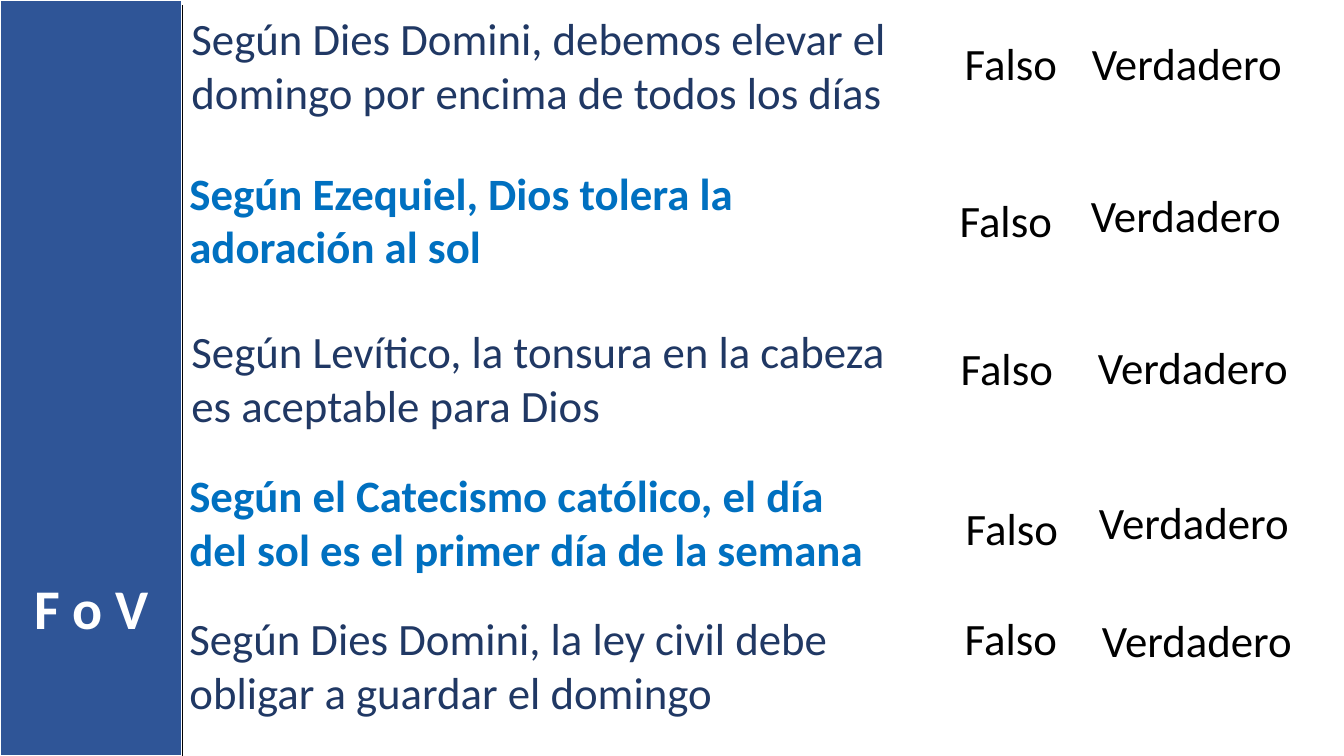
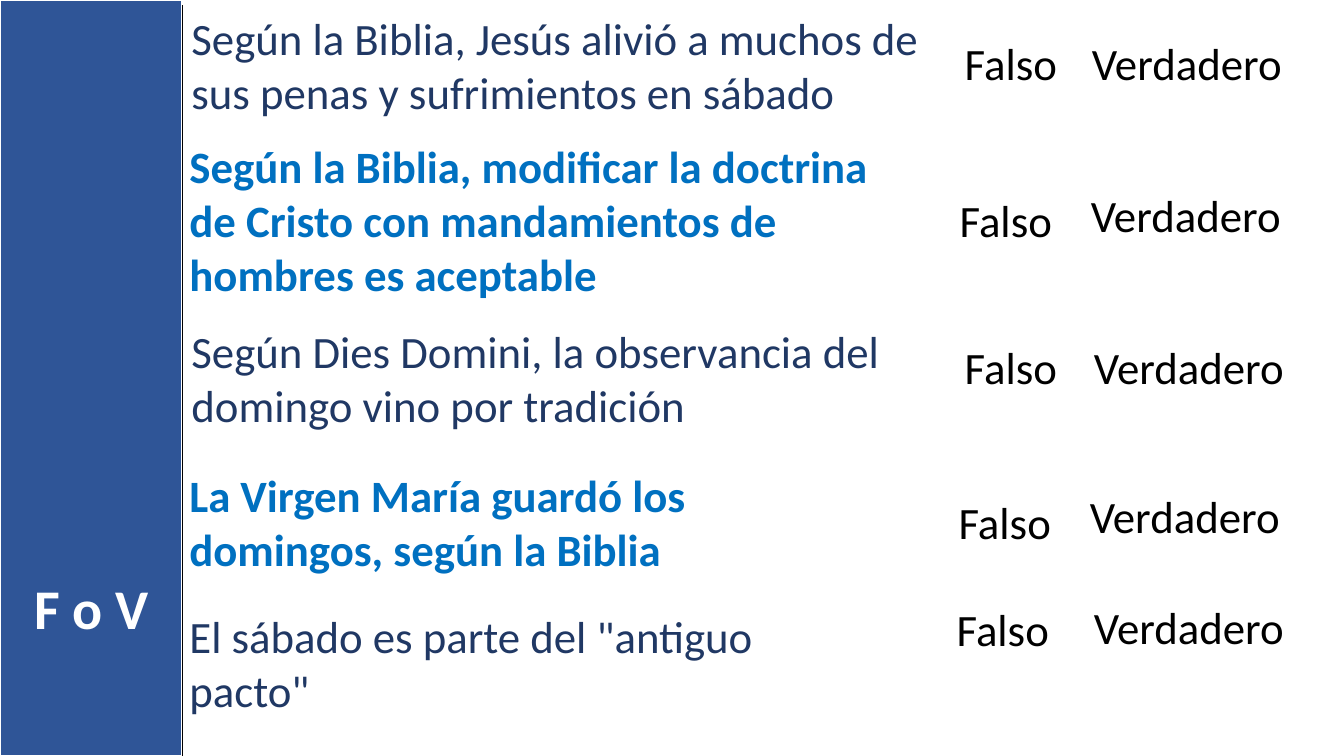
from dataclasses import dataclass
from typing import Any, NamedTuple

from lxml.etree import SubElement
from pptx import Presentation
from pptx.dml.color import RGBColor
from pptx.enum.shapes import MSO_CONNECTOR, MSO_SHAPE
from pptx.enum.text import MSO_AUTO_SIZE, PP_ALIGN
from pptx.oxml.ns import qn
from pptx.slide import Slide
from pptx.util import Inches, Pt


@dataclass(frozen=True)
class Theme:
    font: str = "Calibri"
    band: RGBColor = RGBColor(0x2F, 0x55, 0x97)
    navy: RGBColor = RGBColor(0x20, 0x38, 0x64)
    blue: RGBColor = RGBColor(0x00, 0x70, 0xC0)
    black: RGBColor = RGBColor(0, 0, 0)
    white: RGBColor = RGBColor(255, 255, 255)
    body: Pt = Pt(32)
    title: Pt = Pt(40)


class Box(NamedTuple):
    left: float
    top: float
    width: float
    height: float


class Spot(NamedTuple):
    left: float
    top: float


class Row(NamedTuple):
    text: str
    top: float
    false: Spot
    true: Spot
    lines: int = 2


THEME = Theme()
WIDE, HIGH = 13.33, 7.5
BAND = 1.81
LINE, PAD = 0.54, 0.1
LEFTS = (1.8, 1.78, 1.8, 1.78, 1.78)
WIDTHS = (7.68, 6.99, 7.42, 6.97, 6.99)

PLAIN = {"name": THEME.font, "size": THEME.body, "bold": False}
STRONG = PLAIN | {"bold": True}
TITLE = STRONG | {"size": THEME.title}

QUIZ = (
    (
        Row("Según Dies Domini, debemos elevar el domingo por encima de todos los días",
            0.06, Spot(9.47, 0.31), Spot(10.73, 0.31)),
        Row("Según Ezequiel, Dios tolera la adoración al sol",
            1.59, Spot(9.42, 1.86), Spot(10.72, 1.81)),
        Row("Según Levítico, la tonsura en la cabeza es aceptable para Dios",
            3.16, Spot(9.43, 3.33), Spot(10.79, 3.32)),
        Row("Según el Catecismo católico, el día del sol es el primer día de la semana",
            4.59, Spot(9.48, 4.92), Spot(10.8, 4.86)),
        Row("Según Dies Domini, la ley civil debe obligar a guardar el domingo",
            6.01, Spot(9.47, 6.01), Spot(10.83, 6.03)),
    ),
    (
        Row("Según la Biblia, Jesús alivió a muchos de sus penas y sufrimientos en sábado",
            0.06, Spot(9.47, 0.31), Spot(10.73, 0.31)),
        Row("Según la Biblia, modificar la doctrina de Cristo con mandamientos de "
            "hombres es aceptable",
            1.33, Spot(9.42, 1.86), Spot(10.72, 1.81), 3),
        Row("Según Dies Domini, la observancia del domingo vino por tradición",
            3.16, Spot(9.47, 3.32), Spot(10.75, 3.32)),
        Row("La Virgen María guardó los domingos, según la Biblia",
            4.59, Spot(9.41, 4.86), Spot(10.71, 4.8)),
        Row('El sábado es parte del "antiguo pacto"',
            5.99, Spot(9.39, 5.92), Spot(10.75, 5.9)),
    ),
)


def write(slide: Slide, text: str, box: Box, form: dict[str, Any],
          color: RGBColor, align: PP_ALIGN = PP_ALIGN.LEFT) -> None:
    frame = slide.shapes.add_textbox(*map(Inches, box)).text_frame
    frame.word_wrap = True
    frame.auto_size = MSO_AUTO_SIZE.SHAPE_TO_FIT_TEXT
    para = frame.paragraphs[0]
    para.alignment = align
    run = para.add_run()
    run.text = text
    for key, value in form.items():
        setattr(run.font, key, value)
    run.font.color.rgb = color


def draw_band(slide: Slide) -> None:
    band = slide.shapes.add_shape(
        MSO_SHAPE.RECTANGLE, Inches(0), Inches(0), Inches(BAND), Inches(HIGH))
    band.shadow.inherit = False
    band.fill.solid()
    band.fill.fore_color.rgb = THEME.band
    band.line.color.rgb = THEME.white
    band.line.width = Pt(1.5)
    write(slide, "F o V", Box(0, 5.64, BAND, 0.77), TITLE, THEME.white, PP_ALIGN.CENTER)
    edge = slide.shapes.add_connector(
        MSO_CONNECTOR.STRAIGHT, Inches(BAND), Inches(0.05), Inches(BAND), Inches(HIGH))
    edge.line.color.rgb = THEME.black
    edge.line.width = Pt(1)
    SubElement(edge._element.spPr, qn("a:effectLst"))


def draw_row(slide: Slide, index: int, row: Row) -> None:
    odd = index % 2 == 1
    box = Box(LEFTS[index], row.top, WIDTHS[index], row.lines * LINE + PAD)
    write(slide, row.text, box, STRONG if odd else PLAIN,
          THEME.blue if odd else THEME.navy)
    for text, spot, width in (("Falso", row.false, 1.2), ("Verdadero", row.true, 2.15)):
        write(slide, text, Box(*spot, width, LINE + PAD), PLAIN, THEME.black)


def main() -> None:
    deck = Presentation()
    deck.slide_width, deck.slide_height = Inches(WIDE), Inches(HIGH)
    for rows in QUIZ:
        slide = deck.slides.add_slide(deck.slide_layouts[6])
        draw_band(slide)
        for index, row in enumerate(rows):
            draw_row(slide, index, row)
    deck.save("out.pptx")


if __name__ == "__main__":
    main()
